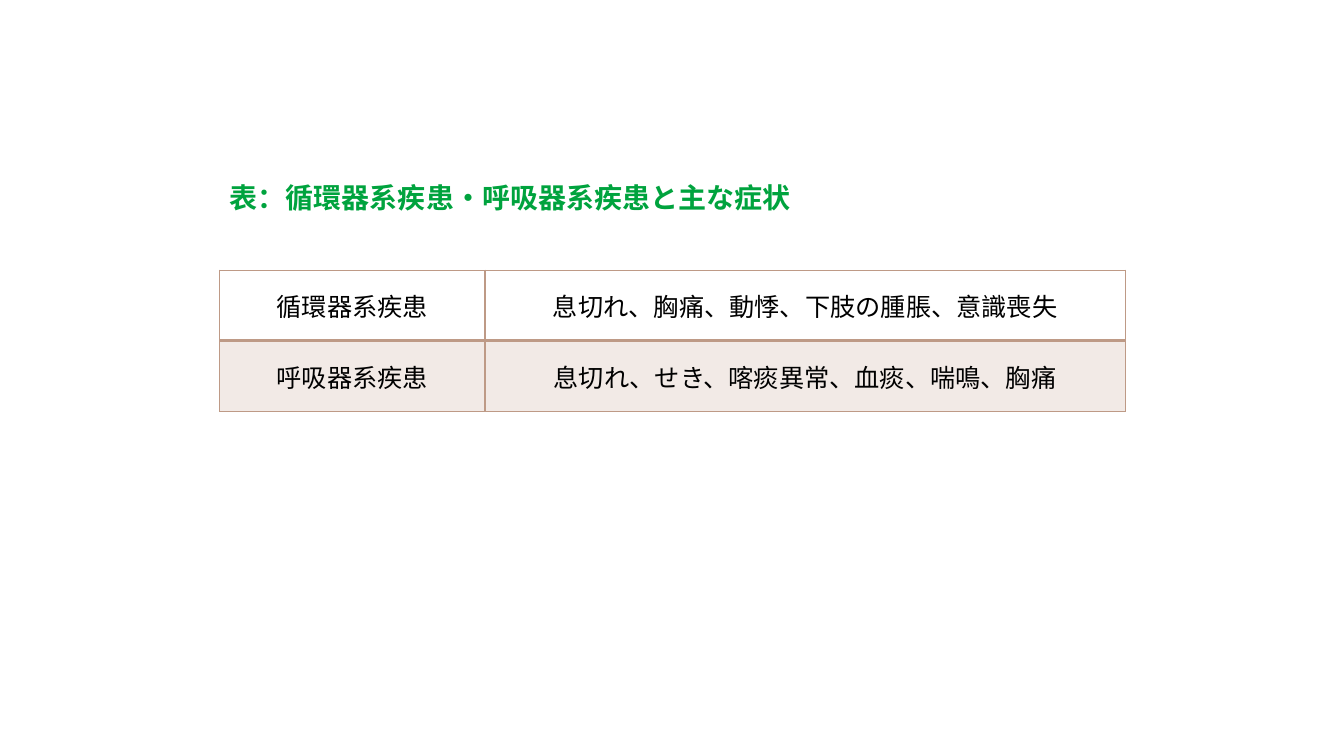
from lxml import etree
from pptx import Presentation
from pptx.dml.color import RGBColor
from pptx.enum.text import MSO_ANCHOR, MSO_AUTO_SIZE, PP_ALIGN
from pptx.oxml.ns import qn
from pptx.util import Inches, Pt

CENTER = PP_ALIGN.CENTER
MIDDLE = MSO_ANCHOR.MIDDLE
GROW_SHAPE = MSO_AUTO_SIZE.SHAPE_TO_FIT_TEXT

GREEN = RGBColor(0x00, 0xA3, 0x3E)
BLACK = RGBColor(0x00, 0x00, 0x00)
BROWN = RGBColor(0xBE, 0x9A, 0x86)
FONT = "Noto Sans CJK JP"
BAND_OPACITY = 20

LEFT = 2.18
COLUMN_WIDTHS = (2.63, 6.35)
ROW_HEIGHT = 0.7
TITLE = "表：循環器系疾患・呼吸器系疾患と主な症状"
SYMPTOMS = (
    ("循環器系疾患", "息切れ、胸痛、動悸、下肢の腫脹、意識喪失"),
    ("呼吸器系疾患", "息切れ、せき、喀痰異常、血痰、喘鳴、胸痛"),
)


def format_run(run, size, color, bold=False):
    """Style a run, with the same font for Latin and East Asian text."""
    run.font.size = Pt(size)
    run.font.bold = bold
    run.font.color.rgb = color
    run.font.name = FONT
    properties = run._r.get_or_add_rPr()
    etree.SubElement(properties, qn("a:ea"), typeface=FONT)


def add_title(slide):
    box = slide.shapes.add_textbox(
        Inches(LEFT), Inches(1.74), Inches(6.67), Inches(0.44))
    text_frame = box.text_frame
    text_frame.word_wrap = True
    text_frame.auto_size = GROW_SHAPE
    text_frame.text = TITLE
    format_run(text_frame.paragraphs[0].runs[0], 20, GREEN, bold=True)


def set_borders(cell, bottom_width):
    """Draw all four borders; call before filling, as lines precede the fill."""
    properties = cell._tc.get_or_add_tcPr()
    for side, width in (("L", 1), ("R", 1), ("T", 1), ("B", bottom_width)):
        line = etree.SubElement(properties, qn(f"a:ln{side}"), w=str(Pt(width)))
        fill = etree.SubElement(line, qn("a:solidFill"))
        etree.SubElement(fill, qn("a:srgbClr"), val=str(BROWN))


def fill_band(cell):
    """Fill a cell with the translucent border colour."""
    cell.fill.solid()
    cell.fill.fore_color.rgb = BROWN
    color = cell._tc.tcPr.find(f"{qn('a:solidFill')}/{qn('a:srgbClr')}")
    etree.SubElement(color, qn("a:alpha"), val=str(BAND_OPACITY * 1000))


def format_cell(cell, text, banded):
    cell.text_frame.text = text
    cell.vertical_anchor = MIDDLE
    paragraph = cell.text_frame.paragraphs[0]
    paragraph.alignment = CENTER
    format_run(paragraph.runs[0], 18, BLACK)
    set_borders(cell, 1 if banded else 2)
    if banded:
        fill_band(cell)
    else:
        cell.fill.background()


def add_symptom_table(slide):
    table = slide.shapes.add_table(
        len(SYMPTOMS), len(COLUMN_WIDTHS), Inches(LEFT), Inches(2.68),
        Inches(sum(COLUMN_WIDTHS)), Inches(ROW_HEIGHT * len(SYMPTOMS))).table
    table.first_row = False
    table.horz_banding = False
    for column, width in zip(table.columns, COLUMN_WIDTHS):
        column.width = Inches(width)
    for row_index, texts in enumerate(SYMPTOMS):
        table.rows[row_index].height = Inches(ROW_HEIGHT)
        for column_index, text in enumerate(texts):
            format_cell(table.cell(row_index, column_index), text,
                        banded=row_index % 2 == 1)


def main():
    presentation = Presentation()
    presentation.slide_width = Inches(13.33)
    presentation.slide_height = Inches(7.5)
    slide = presentation.slides.add_slide(presentation.slide_layouts[6])
    add_symptom_table(slide)
    add_title(slide)
    presentation.save("out.pptx")


if __name__ == "__main__":
    main()
